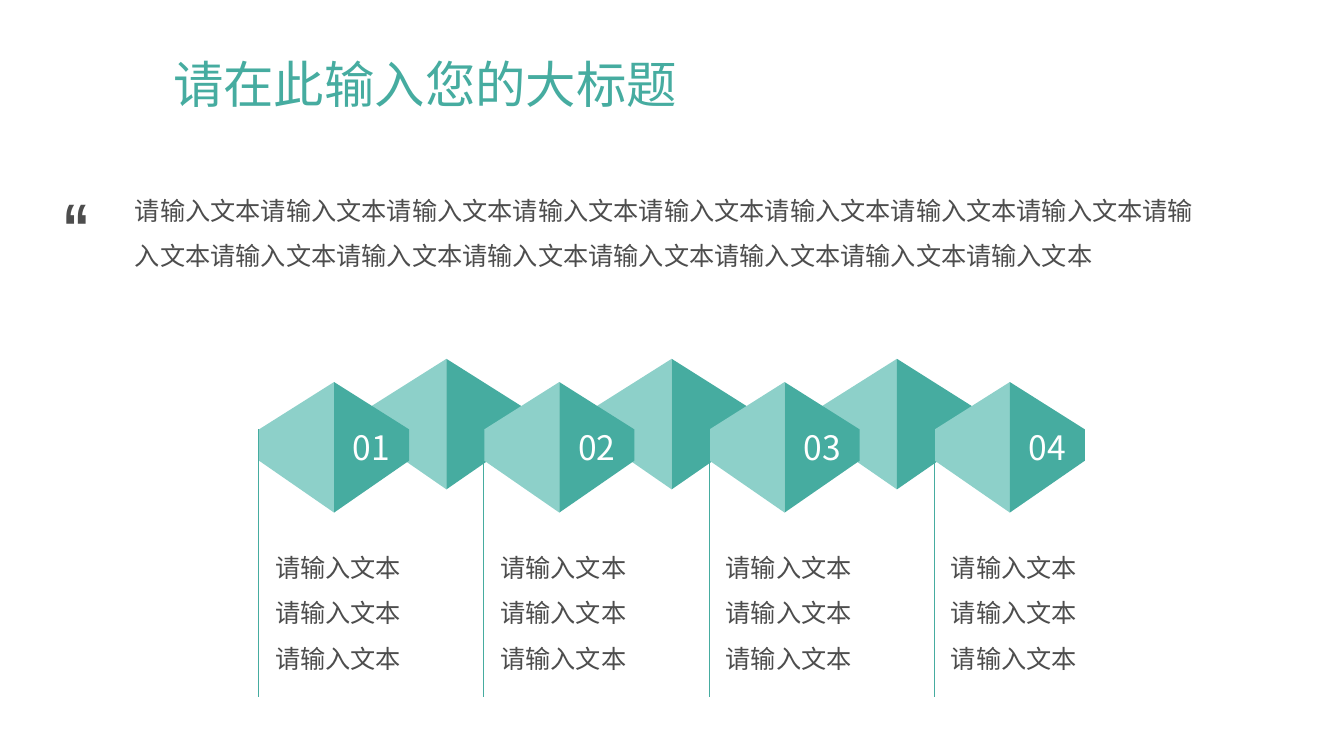
from dataclasses import dataclass

import pptx
import pptx.dml.color
import pptx.enum.shapes
import pptx.enum.text
import pptx.oxml.ns
import pptx.util
from lxml import etree

EMU_PER_PX = 4572  # 200 px to the inch
ALIGN = pptx.enum.text.PP_ALIGN
ANCHOR = pptx.enum.text.MSO_ANCHOR


@dataclass(frozen=True)
class Theme:
    teal: str = "46ACA0"
    light_teal: str = "8DD0C9"
    gray: str = "4D4D4D"
    white: str = "FFFFFF"
    font: str = "Noto Sans CJK SC"
    quote_font: str = "Arial Narrow"
    title_size: int = 36
    number_size: int = 24
    body_size: int = 18
    quote_size: int = 48


def px(length):
    return pptx.util.Emu(length * EMU_PER_PX)


def rgb(color):
    return pptx.dml.color.RGBColor.from_string(color)


class SlideBuilder:
    def __init__(self, slide, theme):
        self.slide = slide
        self.theme = theme

    def fill_frame(self, frame, text, size, color, font=None, bold=False,
                   align=ALIGN.LEFT, spacing=1.0, anchor=ANCHOR.MIDDLE):
        """Put one styled run of text into a text frame."""
        frame.word_wrap = True
        frame.vertical_anchor = anchor
        paragraph = frame.paragraphs[0]
        paragraph.alignment = align
        paragraph.line_spacing = spacing
        run = paragraph.add_run()
        run.text = text
        run.font.size = pptx.util.Pt(size)
        run.font.bold = bold
        run.font.color.rgb = rgb(color)
        run.font.name = font or self.theme.font
        east_asian = etree.SubElement(run.font._element, pptx.oxml.ns.qn("a:ea"))
        east_asian.set("typeface", run.font.name)

    def text(self, left, top, width, height, text, size, color, **style):
        box = self.slide.shapes.add_textbox(px(left), px(top), px(width), px(height))
        self.fill_frame(box.text_frame, text, size, color, **style)

    def polygon(self, points, color):
        start, *others = [(px(x), px(y)) for x, y in points]
        builder = self.slide.shapes.build_freeform(*start)
        builder.add_line_segments(others, close=True)
        shape = builder.convert_to_shape()
        shape.shadow.inherit = False
        shape.fill.solid()
        shape.fill.fore_color.rgb = rgb(color)
        shape.line.fill.background()
        return shape

    def gem(self, left, top, number=None):
        """Draw a hexagon folded into a light and a dark half."""
        half_width, upper, lower, height = 149, 94, 156, 259
        fold = left + half_width
        for edge, color in ((left, self.theme.light_teal),
                            (fold + half_width, self.theme.teal)):
            half = self.polygon([(edge, top + upper), (edge, top + lower),
                                 (fold, top + height), (fold, top)], color)
        if number:
            frame = half.text_frame
            frame.margin_left = frame.margin_right = px(14)
            frame.margin_top = frame.margin_bottom = px(8)
            self.fill_frame(frame, number, self.theme.number_size,
                            self.theme.white, align=ALIGN.CENTER)

    def vertical_line(self, x, top, bottom):
        line = self.slide.shapes.add_connector(
            pptx.enum.shapes.MSO_CONNECTOR.STRAIGHT, px(x), px(top), px(x), px(bottom))
        line.line.color.rgb = rgb(self.theme.teal)
        line.line.width = pptx.util.Pt(0.5)
        etree.SubElement(line._element.spPr, pptx.oxml.ns.qn("a:effectLst"))


def main():
    presentation = pptx.Presentation()
    presentation.slide_width = px(2667)
    presentation.slide_height = px(1500)
    slide = presentation.slides.add_slide(presentation.slide_layouts[6])
    theme = Theme()
    builder = SlideBuilder(slide, theme)
    phrase = "请输入文本"

    builder.text(324, 80, 2176, 186, "请在此输入您的大标题",
                 theme.title_size, theme.teal, spacing=0.9)

    first_left, pitch, count = 514, 447, 4
    columns = [first_left + pitch * index for index in range(count)]
    for left in columns[:-1]:
        builder.gem(left + pitch // 2, 712)
    for index, left in enumerate(columns, start=1):
        builder.gem(left, 758, f"{index:02}")
    for left in columns:
        builder.vertical_line(left - 1, 852, 1382)
        builder.text(left + 1, 1062, 312, 278, phrase * 3, theme.body_size,
                     theme.gray, align=ALIGN.CENTER, spacing=1.5)

    builder.text(248, 314, 2170, 266, phrase * 16, theme.body_size,
                 theme.gray, spacing=1.5)
    builder.text(104, 356, 140, 182, "“", theme.quote_size, theme.gray,
                 font=theme.quote_font, bold=True, anchor=ANCHOR.TOP)

    presentation.save("out.pptx")


if __name__ == "__main__":
    main()
